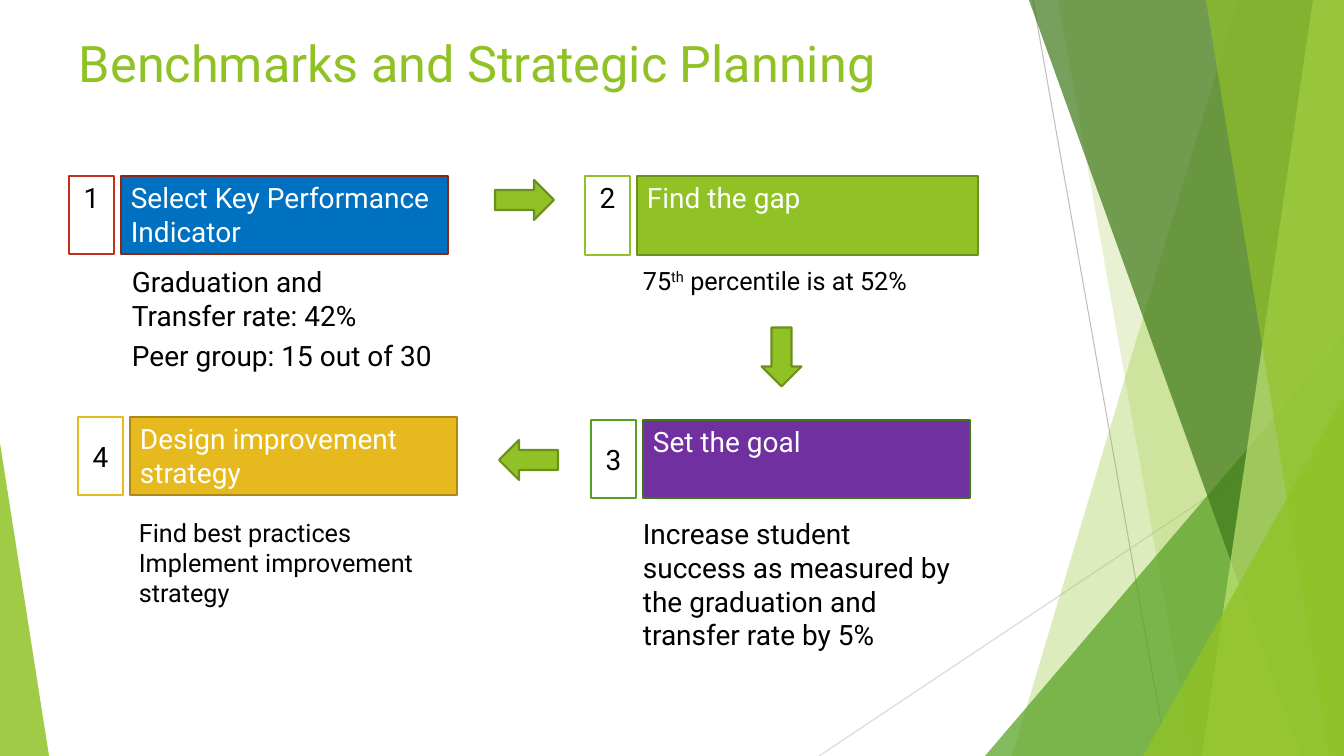
from lxml.etree import SubElement
from pptx import Presentation
from pptx.dml.color import RGBColor
from pptx.enum.shapes import MSO_CONNECTOR, MSO_SHAPE as SHAPE
from pptx.enum.text import MSO_ANCHOR as ANCHOR, PP_ALIGN as ALIGN
from pptx.oxml.ns import qn
from pptx.util import Pt

W, H = 1344, 756
EMU_PER_PX = 12192000 / W
FONT = "Roboto"
C = {
    "white": "FFFFFF", "black": "000000", "lime": "90C226", "olive": "6B901C",
    "green": "54A021", "forest": "3F7819", "pale": "C0E474", "blue": "0070C0",
    "maroon": "912313", "red": "C42F1A", "gold": "E6B91E", "bronze": "AA8916",
    "purple": "7030A0", "moss": "3E7618", "grey": "BFBFBF", "silver": "D9D9D9",
}


def px(n):
    return round(n * EMU_PER_PX)


def rgb(name):
    return RGBColor.from_string(C[name])


def style(s, fill, line=None, alpha=100):
    s.shadow.inherit = False
    s.fill.solid()
    s.fill.fore_color.rgb = rgb(fill)
    if alpha < 100:
        color = s._element.spPr.find(qn("a:solidFill")).find(qn("a:srgbClr"))
        SubElement(color, qn("a:alpha")).set("val", str(alpha * 1000))
    if line:
        s.line.color.rgb = rgb(line)
        s.line.width = Pt(1.5)
    else:
        s.line.fill.background()


def add_preset(slide, kind, box, fill, line=None, alpha=100):
    s = slide.shapes.add_shape(kind, *map(px, box))
    style(s, fill, line, alpha)
    return s


def write(s, paragraphs, size, color, align=ALIGN.LEFT, anchor=ANCHOR.TOP):
    """Fill a shape; every second part of a paragraph is superscript."""
    tf = s.text_frame
    tf.word_wrap = True
    tf.vertical_anchor = anchor
    for i, parts in enumerate(paragraphs):
        p = tf.paragraphs[0] if i == 0 else tf.add_paragraph()
        p.text = parts[0]
        p.alignment = align
        for j, part in enumerate(parts[1:], 1):
            r = p.add_run()
            r.text = part
            if j % 2:
                r._r.get_or_add_rPr().set("baseline", "30000")
        for r in p.runs:
            r.font.name = FONT
            r.font.size = Pt(size)
            r.font.color.rgb = rgb(color)


def add_text(slide, box, paragraphs, size, color):
    write(slide.shapes.add_textbox(*map(px, box)), paragraphs, size, color)


def add_hairline(slide, ends, color):
    s = slide.shapes.add_connector(MSO_CONNECTOR.STRAIGHT, *map(px, ends))
    s.line.color.rgb = rgb(color)
    s.line.width = Pt(0.75)
    SubElement(s._element.spPr, qn("a:effectLst"))


def add_facet(slide, top_x, bottom_x, fill, alpha):
    """Full-height band from a slanted left edge to the right slide edge."""
    fb = slide.shapes.build_freeform(px(top_x), 0)
    corners = [(W, 0), (W, H), (bottom_x, H)]
    fb.add_line_segments([(px(x), px(y)) for x, y in corners], close=True)
    style(fb.convert_to_shape(), fill, alpha=alpha)


def add_corner(slide, box, apex, fill, alpha):
    s = add_preset(slide, SHAPE.ISOSCELES_TRIANGLE, box, fill, alpha=alpha)
    s.adjustments[0] = apex


def add_backdrop(slide):
    add_hairline(slide, (1033, 0, 1167, H), "grey")
    add_hairline(slide, (W, 406, 819, H), "silver")
    add_facet(slide, 1238, 1012, "lime", 30)
    add_facet(slide, 1058, 1192, "lime", 20)
    add_corner(slide, (985, 336, 359, 420), 1, "green", 72)
    add_facet(slide, 1029, 1301, "forest", 70)
    add_facet(slide, 1313, 1202, "pale", 70)
    add_facet(slide, 1206, 1329, "lime", 65)
    add_corner(slide, (1143, 396, 201, 360), 1, "lime", 80)
    add_corner(slide, (0, 443, 49, 313), 0, "lime", 85)


def add_step(slide, box, number, heading, colors, anchor, notes):
    """Numbered heading in its box, with notes offset from the box corner."""
    x, y, w, h = box
    fill, line, number_line = colors
    s = add_preset(slide, SHAPE.RECTANGLE, box, fill, line)
    write(s, [[heading]], 20, "white")
    s = add_preset(slide, SHAPE.RECTANGLE, (x - 52, y, 45, h), "white", number_line)
    write(s, [[number]], 20, "black", ALIGN.CENTER, anchor)
    for dx, dy, width, height, size, paragraphs in notes:
        add_text(slide, (x + dx, y + dy, width, height), paragraphs, size, "black")


def add_arrow(slide, x, y, rotation):
    s = add_preset(slide, SHAPE.RIGHT_ARROW, (x, y, 59, 40), "lime", "olive")
    s.rotation = rotation


def add_cycle(slide):
    add_step(slide, (121, 176, 327, 78), "1", "Select Key Performance Indicator",
             ("blue", "maroon", "red"), ANCHOR.TOP,
             [(1, 84, 334, 78, 20, [["Graduation and \vTransfer rate: 42%"]]),
              (1, 158, 326, 44, 20, [["Peer group: 15 out of 30"]])])
    add_step(slide, (637, 176, 341, 79), "2", "Find the gap",
             ("lime", "olive", "lime"), ANCHOR.TOP,
             [(-4, 84, 292, 40, 18, [["75", "th", " percentile is at 52%"]])])
    add_step(slide, (643, 420, 327, 78), "3", "Set the goal",
             ("purple", "moss", "green"), ANCHOR.MIDDLE,
             [(-10, 92, 337, 146, 20,
               [["Increase student success as measured by the graduation "
                 "and transfer rate by 5%"]])])
    add_step(slide, (130, 417, 327, 78), "4", "Design improvement strategy",
             ("gold", "bronze", "gold"), ANCHOR.MIDDLE,
             [(-1, 95, 302, 102, 18,
               [["Find best practices"], ["Implement improvement\vstrategy"]])])
    for x, y, rotation in [(495, 180, 0), (752, 337, 90), (499, 440, 180)]:
        add_arrow(slide, x, y, rotation)


def main():
    prs = Presentation()
    prs.slide_width, prs.slide_height = px(W), px(H)
    slide = prs.slides.add_slide(prs.slide_layouts[6])
    add_backdrop(slide)
    add_text(slide, (69, 27, 907, 109), [["Benchmarks and Strategic Planning"]], 36, "lime")
    add_cycle(slide)
    prs.save("out.pptx")


if __name__ == "__main__":
    main()
